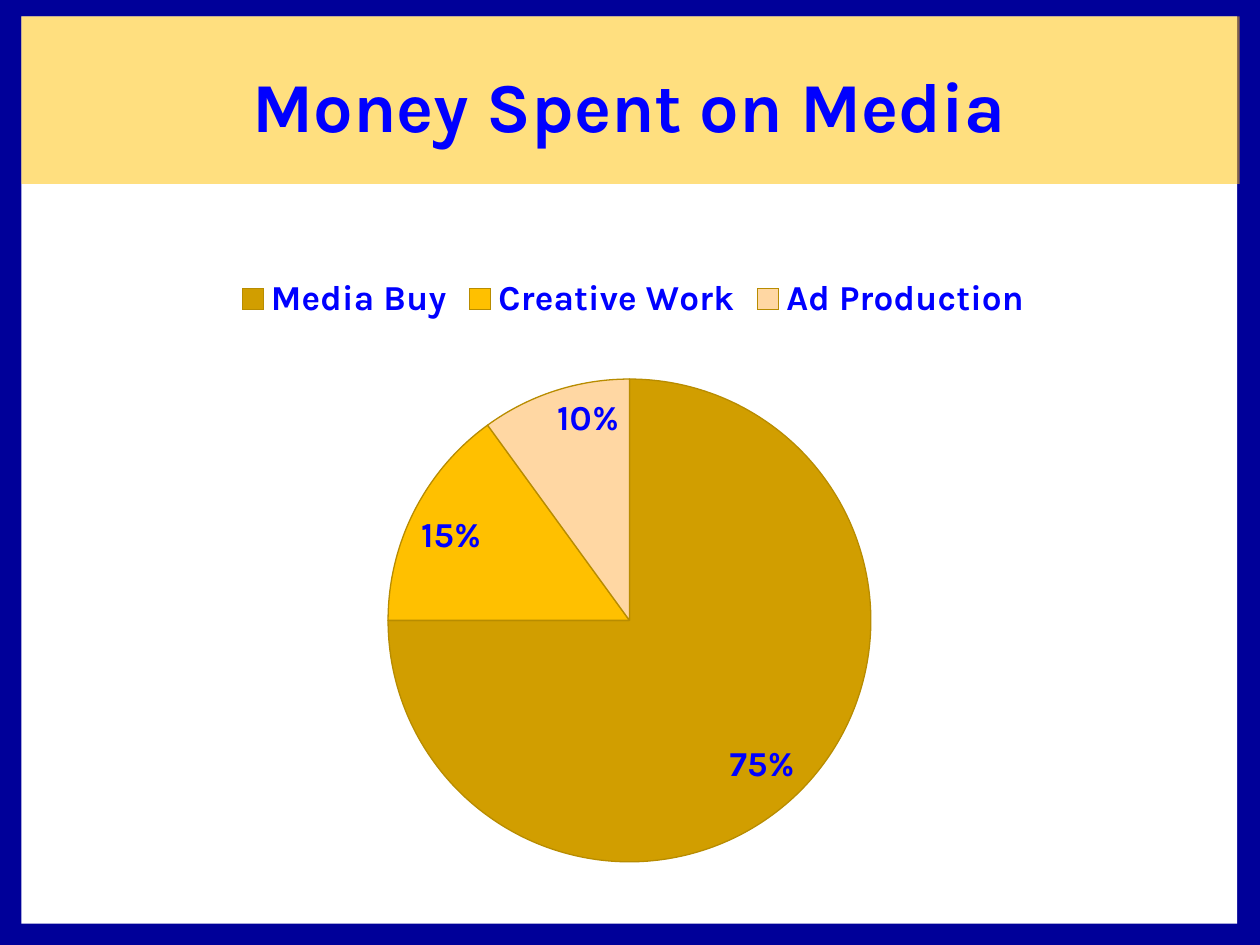
from lxml import etree
from pptx import Presentation
from pptx import util as u
from pptx.chart.data import CategoryChartData
from pptx.dml.color import RGBColor
from pptx.enum import chart as ch, shapes, text
from pptx.oxml import ns

HEADING = "Money Spent on Media"
SPENDING = [
    ("Media Buy", 75, "D19E00"),
    ("Creative Work", 15, "FFC000"),
    ("Ad Production", 10, "FFD7A3"),
]
FONT, BLUE, NAVY, WHITE, AMBER, OUTLINE = "Karla", "0000FF", "000099", "FFFFFF", "FFC000", "B88C00"
SLIDE = (25.4, 19.05)
PANEL = (0.43, 0.33, 24.51, 18.29)
BAND = (0.43, 0.33, 24.56, 3.38)
TITLE = (0.81, 0.51, 23.75, 3.18)
CHART = (2.11, 5.08, 21.16, 12.7)
PIE_LAYOUT = {"layoutTarget": "inner", "xMode": "edge", "yMode": "edge",
              "x": 0.27, "y": 0.2, "w": 0.46, "h": 0.77}
LEGEND_LAYOUT = {"xMode": "edge", "yMode": "edge", "x": 0.12, "y": 0.03}


def rgb(code):
    """Turn a hex string into a colour."""
    return RGBColor.from_string(code)


def cm(box):
    """Turn numbers into centimetre lengths."""
    return [u.Cm(n) for n in box]


def style(font, size, color=BLUE, bold=True):
    """Format a font."""
    font.name, font.size, font.bold = FONT, u.Pt(size), bold
    font.color.rgb = rgb(color)


def write(frame, words, size, align=text.PP_ALIGN.CENTER, anchor=text.MSO_ANCHOR.MIDDLE, **look):
    """Put formatted text into a frame."""
    frame.text = words
    frame.word_wrap = True
    frame.vertical_anchor = anchor
    frame.paragraphs[0].alignment = align
    style(frame.paragraphs[0].runs[0].font, size, **look)


def add_block(slide, box, color, alpha=None):
    """Add a plain rectangle, optionally see-through."""
    block = slide.shapes.add_shape(shapes.MSO_SHAPE.RECTANGLE, *cm(box))
    block.shadow.inherit = False
    block.fill.solid()
    block.fill.fore_color.rgb = rgb(color)
    block.line.fill.background()
    if alpha is not None:
        tint = block.fill._xPr.find(".//" + ns.qn("a:srgbClr"))
        etree.SubElement(tint, ns.qn("a:alpha")).set("val", str(alpha * 1000))


def set_layout(parent, index, settings):
    """Give a chart part a manual layout."""
    for old in parent.findall(ns.qn("c:layout")):
        parent.remove(old)
    layout = etree.Element(ns.qn("c:layout"))
    manual = etree.SubElement(layout, ns.qn("c:manualLayout"))
    for tag, value in settings.items():
        etree.SubElement(manual, ns.qn("c:" + tag)).set("val", str(value))
    parent.insert(index, layout)


def add_pie(slide):
    """Add the spending pie with its legend and percent labels."""
    data = CategoryChartData()
    data.categories = [name for name, _, _ in SPENDING]
    data.add_series("Series 1", [share for _, share, _ in SPENDING])
    pie = slide.shapes.add_chart(ch.XL_CHART_TYPE.PIE, *cm(CHART), data).chart
    style(pie.font, 18, color="000000", bold=False)
    pie.has_title = False
    pie.has_legend = True
    pie.legend.position = ch.XL_LEGEND_POSITION.TOP
    pie.legend.include_in_layout = False
    style(pie.legend.font, 20)

    plot = pie.plots[0]
    plot.vary_by_categories = True
    for index, (_, _, color) in enumerate(SPENDING):
        wedge = plot.series[0].points[index].format
        wedge.fill.solid()
        wedge.fill.fore_color.rgb = rgb(color)
        wedge.line.color.rgb = rgb(OUTLINE)
        wedge.line.width = u.Pt(0.75)
    labels = plot.series[0].data_labels
    labels.show_percentage = True
    labels.show_value = False
    labels.number_format, labels.number_format_is_linked = "0%", False
    labels.position = ch.XL_LABEL_POSITION.INSIDE_END
    style(labels.font, 20)

    set_layout(pie._chartSpace.chart.plotArea, 0, PIE_LAYOUT)
    set_layout(pie.legend._element, 1, LEGEND_LAYOUT)


def main():
    """Build the slide and save it."""
    deck = Presentation()
    deck.slide_width, deck.slide_height = cm(SLIDE)
    slide = deck.slides.add_slide(deck.slide_layouts[5])
    add_block(slide, (0, 0, *SLIDE), NAVY)
    add_block(slide, PANEL, WHITE)
    add_pie(slide)
    add_block(slide, BAND, AMBER, alpha=50)

    title = slide.shapes.title
    title.left, title.top, title.width, title.height = cm(TITLE)
    write(title.text_frame, HEADING, 40)
    slide.shapes._spTree.append(title._element)
    deck.save("out.pptx")


if __name__ == "__main__":
    main()
